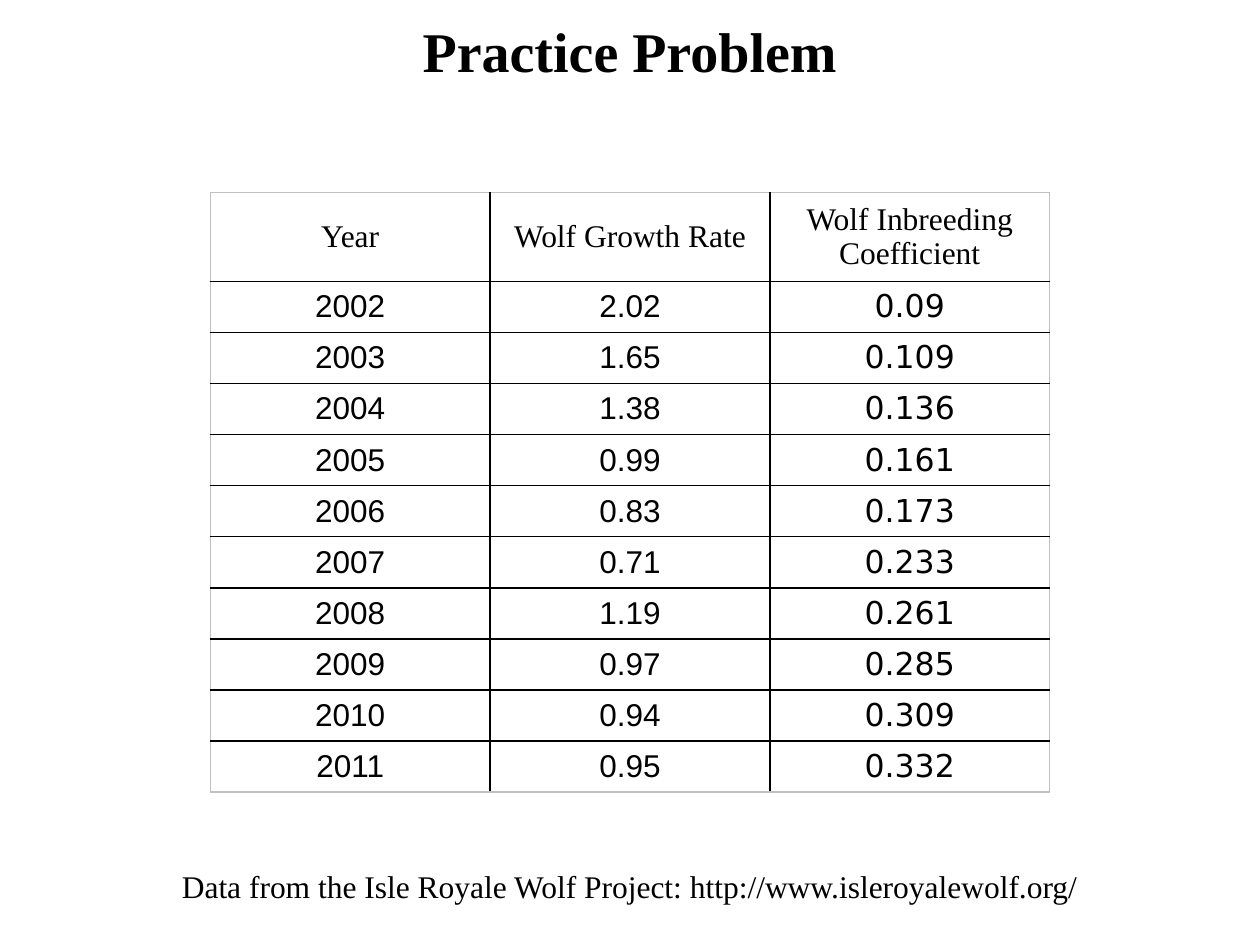
from lxml.etree import SubElement
from pptx import Presentation
from pptx.dml.color import RGBColor as Color
from pptx.enum.text import MSO_ANCHOR as Anchor, PP_ALIGN as Align
from pptx.oxml.ns import qn
from pptx.util import Cm, Pt

TITLE = "Practice Problem"
SOURCE = "Data from the Isle Royale Wolf Project: http://www.isleroyalewolf.org/"
HEADERS = ("Year", "Wolf Growth Rate", "Wolf Inbreeding Coefficient")
WOLVES = [
    ("2002", "2.02", "0.09"),
    ("2003", "1.65", "0.109"),
    ("2004", "1.38", "0.136"),
    ("2005", "0.99", "0.161"),
    ("2006", "0.83", "0.173"),
    ("2007", "0.71", "0.233"),
    ("2008", "1.19", "0.261"),
    ("2009", "0.97", "0.285"),
    ("2010", "0.94", "0.309"),
    ("2011", "0.95", "0.332"),
]
COLORS = {"text": "000000", "grid": "000000", "frame": "C0C0C0", "cell": "FFFFFF"}
SERIF = "Times New Roman"
COLUMN_FONTS = ("Arial", "Arial", "DejaVu Sans")
SLIDE_WIDTH, SLIDE_HEIGHT = 25.4, 19.05
COLUMN_WIDTH, HEADER_HEIGHT, ROW_HEIGHT = 5.64, 1.79, 1.03
TABLE_TOP = 3.88


def write(frame, text, size=18, font=SERIF, bold=False):
    paragraph = frame.paragraphs[0]
    paragraph.alignment = Align.CENTER
    run = paragraph.add_run()
    run.text = text
    run.font.size = Pt(size)
    run.font.name = font
    run.font.bold = bold
    run.font.color.rgb = Color.from_string(COLORS["text"])


def add_line(slide, text, top, height, **style):
    box = slide.shapes.add_textbox(0, Cm(top), Cm(SLIDE_WIDTH), Cm(height))
    box.text_frame.word_wrap = True
    write(box.text_frame, text, **style)


def set_borders(cell, outer):
    properties = cell._tc.get_or_add_tcPr()
    for side, is_outer in outer.items():
        line = SubElement(properties, qn("a:" + side), w=str(Pt(1)))
        fill = SubElement(line, qn("a:solidFill"))
        color = COLORS["frame" if is_outer else "grid"]
        SubElement(fill, qn("a:srgbClr"), val=color)


def add_wolf_table(slide):
    rows = [HEADERS, *WOLVES]
    last_row, last_column = len(rows) - 1, len(HEADERS) - 1
    width = COLUMN_WIDTH * len(HEADERS)
    height = HEADER_HEIGHT + ROW_HEIGHT * len(WOLVES)
    left = (SLIDE_WIDTH - width) / 2
    table = slide.shapes.add_table(len(rows), len(HEADERS), Cm(left), Cm(TABLE_TOP),
                                   Cm(width), Cm(height)).table
    table.first_row = table.horz_banding = False
    for column in table.columns:
        column.width = Cm(COLUMN_WIDTH)
    for row_index, values in enumerate(rows):
        is_header = row_index == 0
        table.rows[row_index].height = Cm(HEADER_HEIGHT if is_header else ROW_HEIGHT)
        for column_index, value in enumerate(values):
            cell = table.cell(row_index, column_index)
            cell.vertical_anchor = Anchor.MIDDLE
            if not is_header:
                cell.margin_left = cell.margin_right = 0
                cell.margin_top = cell.margin_bottom = 0
            set_borders(cell, {"lnL": column_index == 0, "lnR": column_index == last_column,
                               "lnT": is_header, "lnB": row_index == last_row})
            cell.fill.solid()
            cell.fill.fore_color.rgb = Color.from_string(COLORS["cell"])
            write(cell.text_frame, value, font=SERIF if is_header else COLUMN_FONTS[column_index])


def main():
    presentation = Presentation()
    presentation.slide_width, presentation.slide_height = Cm(SLIDE_WIDTH), Cm(SLIDE_HEIGHT)
    slide = presentation.slides.add_slide(presentation.slide_layouts[6])
    add_line(slide, TITLE, 0.2, 1.63, size=32, bold=True)
    add_wolf_table(slide)
    add_line(slide, SOURCE, 17.35, 1.02)
    presentation.save("out.pptx")


if __name__ == "__main__":
    main()
